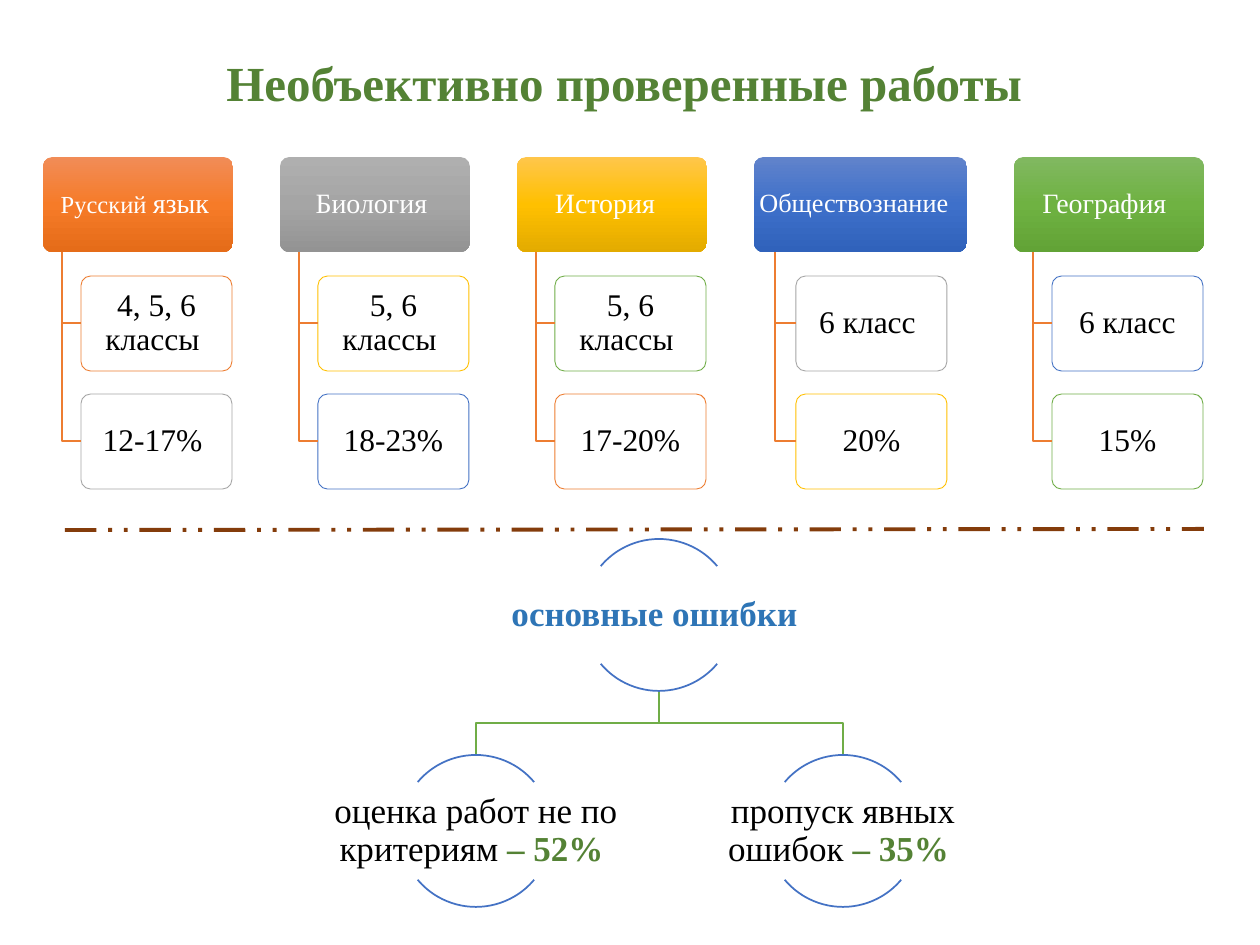
from copy import deepcopy

from lxml import etree
from pptx import Presentation
from pptx import util as u
from pptx.dml import color
from pptx.enum import dml, shapes, text
from pptx.oxml import ns

SCALE = 914400 / 126
FONT = "Times New Roman"
WHITE = color.RGBColor(0xFF, 0xFF, 0xFF)
BLACK = color.RGBColor(0x00, 0x00, 0x00)
ORANGE = color.RGBColor(0xED, 0x7D, 0x31)
GRAY = color.RGBColor(0xA5, 0xA5, 0xA5)
GOLD = color.RGBColor(0xFF, 0xC0, 0x00)
BLUE = color.RGBColor(0x44, 0x72, 0xC4)
GREEN = color.RGBColor(0x70, 0xAD, 0x47)
DARK_GREEN = color.RGBColor(0x54, 0x82, 0x35)
HEADING_BLUE = color.RGBColor(0x2E, 0x75, 0xB6)
BROWN = color.RGBColor(0x84, 0x3C, 0x0B)


def px(*lengths):
    return [u.Emu(round(length * SCALE)) for length in lengths]


def write(frame, runs, size=18, fill=BLACK, bold=False, margins=(4, 3),
          anchor=text.MSO_ANCHOR.MIDDLE):
    frame.word_wrap = True
    frame.auto_size = text.MSO_AUTO_SIZE.NONE
    frame.vertical_anchor = anchor
    frame.margin_left = frame.margin_right = px(margins[0])[0]
    frame.margin_top = frame.margin_bottom = px(margins[1])[0]
    paragraph = frame.paragraphs[0]
    paragraph.alignment = text.PP_ALIGN.CENTER
    paragraph.line_spacing = 0.9
    for words, changes in runs:
        run = paragraph.add_run()
        run.text = words
        run.font.name = FONT
        run.font.size = u.Pt(changes.get("size", size))
        run.font.bold = changes.get("bold", bold)
        run.font.color.rgb = changes.get("fill", fill)


presentation = Presentation()
presentation.slide_width, presentation.slide_height = px(1260, 945)
slide = presentation.slides.add_slide(presentation.slide_layouts[5])

title = slide.shapes.title
title.left, title.top, title.width, title.height = px(81, 53, 1086, 690)
write(title.text_frame, [("Необъективно проверенные работы", {})], size=28,
      fill=DARK_GREEN, bold=True, margins=(13, 6), anchor=text.MSO_ANCHOR.TOP)

HEADER_TOP, BOX_HEIGHT, CARD_WIDTH = 157, 95, 151
CARD_TOPS = (276, 394)
subjects = [
    (43, 190, 38, [("Русский ", {"size": 14}), ("язык", {}), (" ", {"size": 14})],
     ("F18C57", "F67B28", "E56C19"),
     [("4, 5, 6 классы ", ORANGE), ("12-17% ", GRAY)]),
    (280, 190, 38, [("Биология ", {})],
     ("AFAFAF", "A5A5A5", "939393"),
     [("5, 6 классы ", GOLD), ("18-23%", BLUE)]),
    (517, 190, 38, [("История  ", {})],
     ("FFC64B", "FFC000", "E3AB00"),
     [("5, 6 классы ", GREEN), ("17-20%", ORANGE)]),
    (754, 213, 42, [("Обществознание  ", {"size": 15})],
     ("6183CB", "3E70CA", "3062BB"),
     [("6 класс ", GRAY), ("20%", GOLD)]),
    (1014, 190, 38, [("География", {}), ("  ", {"size": 10.5})],
     ("81B861", "6FB242", "62A336"),
     [(" 6 класс ", BLUE), ("15%", GREEN)]),
]

outlines = []
for left, width, indent, runs, gradient, cards in subjects:
    header = slide.shapes.add_shape(shapes.MSO_SHAPE.ROUNDED_RECTANGLE,
                                    *px(left, HEADER_TOP, width, BOX_HEIGHT))
    header.adjustments[0] = 0.1
    header.shadow.inherit = False
    header.line.fill.background()
    header.fill.gradient()
    header.fill.gradient_angle = 270
    stop_list = header._element.spPr.find(".//" + ns.qn("a:gsLst"))
    stop_list.insert(1, deepcopy(stop_list[0]))
    for stop, position, shade in zip(header.fill.gradient_stops, (0, 0.5, 1), gradient):
        stop.position = position
        stop.color.rgb = color.RGBColor.from_string(shade)
    write(header.text_frame, runs, size=16, fill=WHITE, margins=(1, 1))

    trunk = left + indent // 2
    for top, (words, border) in zip(CARD_TOPS, cards):
        middle = top + BOX_HEIGHT // 2
        outlines.append((ORANGE, [(trunk, HEADER_TOP + BOX_HEIGHT), (trunk, middle),
                                  (left + indent, middle)]))
        card = slide.shapes.add_shape(shapes.MSO_SHAPE.ROUNDED_RECTANGLE,
                                      *px(left + indent, top, CARD_WIDTH, BOX_HEIGHT))
        card.adjustments[0] = 0.1
        card.shadow.inherit = False
        card.fill.solid()
        card.fill.fore_color.rgb = WHITE
        white = card._element.spPr.find(ns.qn("a:solidFill"))[0]
        etree.SubElement(white, ns.qn("a:alpha"), val="90000")
        card.line.color.rgb = border
        card.line.width = u.Pt(0.5)
        write(card.text_frame, [(words, {})], margins=(3, 2))

CIRCLE = 152
ROOT_CENTER, ROOT_TOP, CAUSE_TOP = 659, 539, 755
for center in (843, 476):
    outlines.append((GREEN, [(ROOT_CENTER, ROOT_TOP + CIRCLE), (ROOT_CENTER, 723),
                             (center, 723), (center, CAUSE_TOP)]))

for shade, points in outlines:
    builder = slide.shapes.build_freeform(*points[0], scale=SCALE)
    builder.add_line_segments(points[1:], close=False)
    branch = builder.convert_to_shape()
    branch.shadow.inherit = False
    branch.fill.background()
    branch.line.color.rgb = shade
    branch.line.width = u.Pt(1)

accent = {"fill": DARK_GREEN, "bold": True}
mistakes = [
    (ROOT_CENTER, ROOT_TOP, [("основные ошибки ", {"fill": HEADING_BLUE, "bold": True})]),
    (476, CAUSE_TOP, [("оценка работ не по критериям ", {}), ("– 52% ", accent)]),
    (843, CAUSE_TOP, [("пропуск явных ошибок ", {}), ("– 35% ", accent)]),
]
for center, top, runs in mistakes:
    for start, end in ((132, 192), (24, 84)):
        arc = slide.shapes.add_shape(shapes.MSO_SHAPE.ARC,
                                     *px(center - CIRCLE // 2, top, CIRCLE, CIRCLE))
        arc.adjustments[0], arc.adjustments[1] = start, end
        arc.shadow.inherit = False
        arc.fill.background()
        arc.line.color.rgb = BLUE
        arc.line.width = u.Pt(1)
    label = slide.shapes.add_textbox(*px(center - 152, top + 28, 304, 97))
    write(label.text_frame, runs, size=20, margins=(1, 1))

divider = slide.shapes.add_connector(shapes.MSO_CONNECTOR.STRAIGHT,
                                     *px(65, 530, 1204, 529))
divider.line.color.rgb = BROWN
divider.line.width = u.Pt(2.25)
divider.line.dash_style = dml.MSO_LINE.DASH_DOT_DOT
etree.SubElement(divider._element.spPr, ns.qn("a:effectLst"))

presentation.save("out.pptx")
